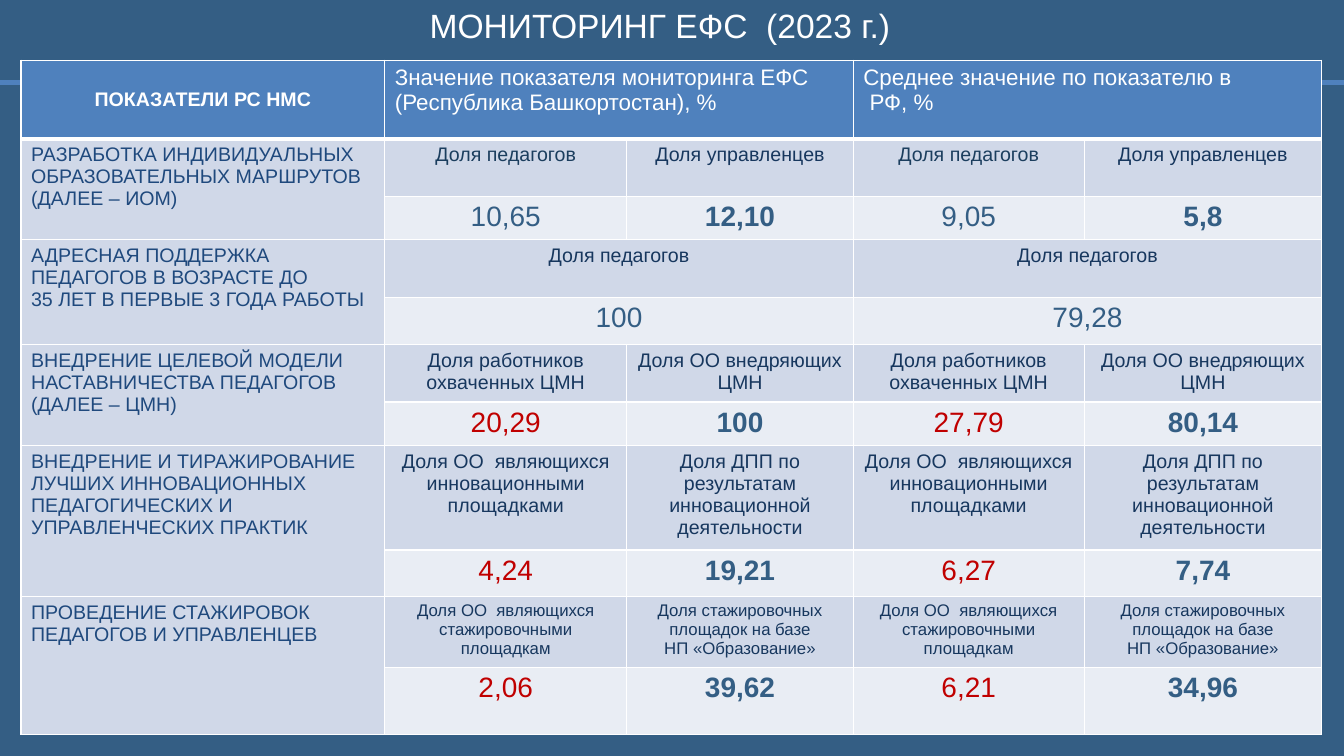
import pptx
import pptx.dml.color
import pptx.enum.shapes
import pptx.enum.text
import pptx.oxml
import pptx.util
from pptx.oxml.ns import qn

Cm, Pt = pptx.util.Cm, pptx.util.Pt
ALIGN = pptx.enum.text.PP_ALIGN
ANCHOR = pptx.enum.text.MSO_ANCHOR
COLORS = {
    "back": "345E84", "head": "4F81BD", "white": "FFFFFF", "pale": "D0D8E8",
    "light": "E9EDF4", "topic": "1F497D", "label": "17375E", "staff": "1B3E5E",
    "value": "345E84", "low": "C00000",
}
COLS = [9.17, 6.1, 5.71, 5.82, 5.99]
ROWS = [1.98, 1.45, 1.09, 1.45, 1.19, 1.45, 1.09, 2.64, 1.17, 1.78, 1.7]
HEADS = ["Значение показателя мониторинга ЕФС\n(Республика Башкортостан), %",
         "Среднее значение по показателю в\n РФ, %"]
TOPICS = [
    {"name": "РАЗРАБОТКА ИНДИВИДУАЛЬНЫХ ОБРАЗОВАТЕЛЬНЫХ МАРШРУТОВ (ДАЛЕЕ – ИОМ)",
     "labels": ["Доля педагогов", "Доля управленцев"], "tint": "staff",
     "values": ["10,65", "12,10", "9,05", "5,8"]},
    {"name": "АДРЕСНАЯ ПОДДЕРЖКА\nПЕДАГОГОВ В ВОЗРАСТЕ ДО\n35 ЛЕТ В ПЕРВЫЕ 3 ГОДА РАБОТЫ",
     "labels": ["Доля педагогов"], "values": ["100", "79,28"]},
    {"name": "ВНЕДРЕНИЕ ЦЕЛЕВОЙ МОДЕЛИ НАСТАВНИЧЕСТВА ПЕДАГОГОВ (ДАЛЕЕ – ЦМН)",
     "labels": ["Доля работников охваченных ЦМН", "Доля ОО внедряющих ЦМН"],
     "values": ["20,29", "100", "27,79", "80,14"], "mark": "low"},
    {"name": "ВНЕДРЕНИЕ И ТИРАЖИРОВАНИЕ ЛУЧШИХ ИННОВАЦИОННЫХ ПЕДАГОГИЧЕСКИХ И УПРАВЛЕНЧЕСКИХ ПРАКТИК",
     "labels": ["Доля ОО  являющихся инновационными площадками",
                "Доля ДПП по результатам инновационной деятельности"],
     "values": ["4,24", "19,21", "6,27", "7,74"], "mark": "low"},
    {"name": "ПРОВЕДЕНИЕ СТАЖИРОВОК ПЕДАГОГОВ И УПРАВЛЕНЦЕВ",
     "labels": ["Доля ОО  являющихся стажировочными площадкам",
                "Доля стажировочных площадок на базе\nНП «Образование»"],
     "values": ["2,06", "39,62", "6,21", "34,96"], "mark": "low", "size": 12},
]


def tint(name):
    return pptx.dml.color.RGBColor.from_string(COLORS[name])


def write(frame, text, color, size, bold=False, align=ALIGN.CENTER):
    frame.text = text
    form = {"name": "Arial", "size": Pt(size), "bold": bold}
    for para in frame.paragraphs:
        para.alignment = align
        for run in para.runs:
            for key, value in form.items():
                setattr(run.font, key, value)
            run.font.color.rgb = tint(color)


def paint(cell, fill, top=1, base=1):
    cell.fill.solid()
    cell.fill.fore_color.rgb = tint(fill)
    sides = {"lnL": 1, "lnR": 1, "lnT": top, "lnB": base}
    for spot, (side, width) in enumerate(sides.items()):
        line = pptx.oxml.parse_xml(
            f'<a:{side} xmlns:a="http://schemas.openxmlformats.org/drawingml/2006/main" '
            f'w="{Pt(width)}"><a:solidFill><a:srgbClr val="{COLORS["white"]}"/>'
            f'</a:solidFill></a:{side}>')
        cell._tc.get_or_add_tcPr().insert(spot, line)


def add_title(slide, left, top, width, height):
    title = slide.shapes.title
    place = {"left": left, "top": top, "width": width, "height": height}
    for key, value in place.items():
        setattr(title, key, Cm(value))
    form = {"vertical_anchor": ANCHOR.TOP, "word_wrap": True,
            "auto_size": pptx.enum.text.MSO_AUTO_SIZE.NONE}
    for key, value in form.items():
        setattr(title.text_frame, key, value)
    write(title.text_frame, "МОНИТОРИНГ ЕФС  (2023 г.)", "white", 24)


def add_rule(slide, left, top, width):
    rule = slide.shapes.add_connector(
        pptx.enum.shapes.MSO_CONNECTOR.STRAIGHT,
        Cm(left), Cm(top), Cm(left + width), Cm(top))
    rule.line.color.rgb = tint("head")
    rule.line.width = Pt(3)
    rule._element.spPr.append(rule._element.makeelement(qn("a:effectLst"), {}))


def fill_head(table):
    first = table.cell(0, 0)
    write(first.text_frame, "ПОКАЗАТЕЛИ РС НМС", "white", 14, True)
    first.vertical_anchor = ANCHOR.MIDDLE
    for col, text in zip((1, 3), HEADS):
        table.cell(0, col).merge(table.cell(0, col + 1))
        write(table.cell(0, col).text_frame, text, "white", 16, align=ALIGN.LEFT)


def fill_topic(table, row, topic):
    table.cell(row, 0).merge(table.cell(row + 1, 0))
    write(table.cell(row, 0).text_frame, topic["name"], "topic", 14, align=ALIGN.LEFT)
    span = 2 // len(topic["labels"])
    for spot, (label, value) in enumerate(zip(topic["labels"] * 2, topic["values"])):
        col = 1 + spot * span
        main = col % 2 == 1
        if span == 2:
            for line in (row, row + 1):
                table.cell(line, col).merge(table.cell(line, col + 1))
        write(table.cell(row, col).text_frame, label,
              topic.get("tint", "label") if main else "label", topic.get("size", 14))
        write(table.cell(row + 1, col).text_frame, value,
              topic.get("mark", "value") if main else "value", 20, not main)


def add_grid(slide, left, top):
    table = slide.shapes.add_table(
        len(ROWS), len(COLS), Cm(left), Cm(top), Cm(sum(COLS)), Cm(sum(ROWS))).table
    table.horz_banding = False
    for col, width in zip(table.columns, COLS):
        col.width = Cm(width)
    for row, (line, height) in enumerate(zip(table.rows, ROWS)):
        line.height = Cm(height)
        for col, cell in enumerate(line.cells):
            fill = "head" if row == 0 else "pale" if col == 0 or row % 2 else "light"
            paint(cell, fill, 3 if row == 1 else 1, 3 if row == 0 else 1)
    fill_head(table)
    for spot, topic in enumerate(TOPICS):
        fill_topic(table, 1 + 2 * spot, topic)


def main():
    deck = pptx.Presentation()
    deck.slide_width, deck.slide_height = Cm(33.88), Cm(19.05)
    slide = deck.slides.add_slide(deck.slide_layouts[5])
    slide.background.fill.solid()
    slide.background.fill.fore_color.rgb = tint("back")
    add_rule(slide, 0, 2.08, 33.88)
    add_grid(slide, 0.53, 1.52)
    add_title(slide, 0.53, 0, 32.21, 2.31)
    deck.save("out.pptx")


if __name__ == "__main__":
    main()
